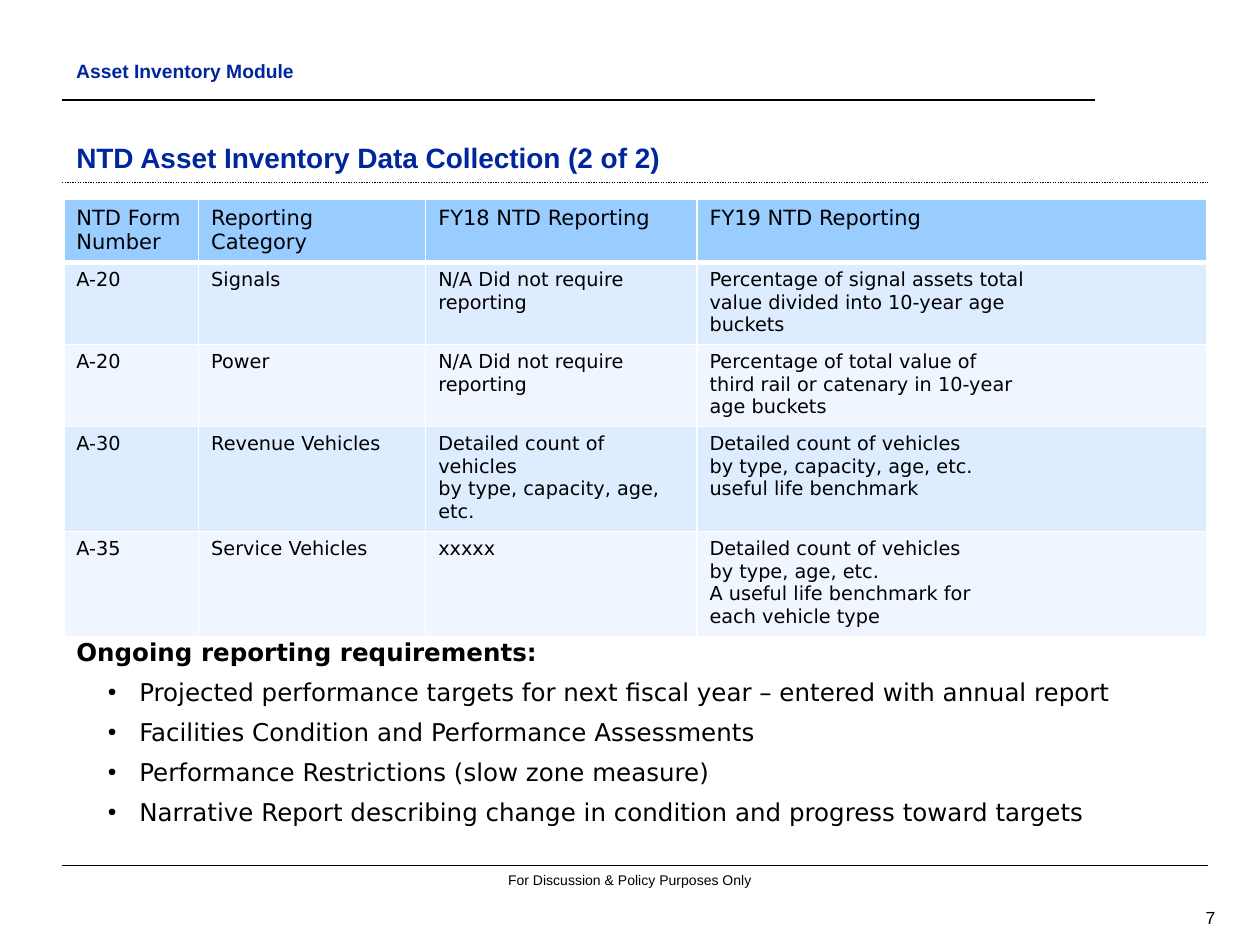
"""Build the asset inventory data collection slide."""
from dataclasses import dataclass

import pptx
import pptx.dml.color
import pptx.enum.dml
import pptx.enum.shapes
import pptx.enum.text
import pptx.oxml.xmlchemy
import pptx.oxml.ns
import pptx.util
from lxml import etree

Pt = pptx.util.Pt
ALIGN = pptx.enum.text.PP_ALIGN
ANCHOR = pptx.enum.text.MSO_ANCHOR
DASH = pptx.enum.dml.MSO_LINE


@dataclass(frozen=True)
class Theme:
    """Hold the colours, fonts and type sizes."""
    ink: str = "000000"
    navy: str = "00269E"
    border: str = "FFFFFF"
    header: str = "99CCFF"
    bands: tuple = ("DEECFF", "EFF6FF")
    sans: str = "Arial"
    body: str = "DejaVu Sans"
    title: int = 16
    requirement: int = 14
    column_head: int = 12
    cell: int = 11
    page: int = 10
    footer: int = 8


THEME = Theme()
LEFT, RULE_LEFT, RIGHT = 36.5, 35.5, 690.5
COLUMN_WIDTHS = (77, 129.75, 155, 291.5)
ROW_HEIGHT = 29.5
HEADINGS = ("NTD Form Number", "Reporting Category", "FY18 NTD Reporting", "FY19 NTD Reporting")
ASSETS = (
    ("A-20", "Signals", "N/A Did not require reporting",
     "Percentage of signal assets total\nvalue divided into 10-year age\nbuckets"),
    ("A-20", "Power", "N/A Did not require reporting",
     "Percentage of total value of\nthird rail or catenary in 10-year\nage buckets"),
    ("A-30", "Revenue Vehicles", "Detailed count of vehicles\nby type, capacity, age, etc.",
     "Detailed count of vehicles\nby type, capacity, age, etc.\nuseful life benchmark"),
    ("A-35", "Service Vehicles", "xxxxx",
     "Detailed count of vehicles\nby type, age, etc.\nA useful life benchmark for\neach vehicle type"),
)
REQUIREMENTS = (
    "Projected performance targets for next fiscal year – entered with annual report",
    "Facilities Condition and Performance Assessments",
    "Performance Restrictions (slow zone measure)",
    "Narrative Report describing change in condition and progress toward targets",
)


def rgb(colour):
    """Turn a hex string into a colour."""
    return pptx.dml.color.RGBColor.from_string(colour)


def add_element(parent, tag, **attributes):
    """Append a DrawingML element with attributes."""
    return etree.SubElement(parent, pptx.oxml.ns.qn(tag), attributes)


def write(paragraph, text, *, size, font=THEME.body, colour=THEME.ink, bold=False,
          align=ALIGN.LEFT, after=0, margin=0, hanging=0, bullet=None):
    """Write formatted text into a paragraph."""
    properties = paragraph._p.get_or_add_pPr()
    properties.set("marL", str(Pt(margin)))
    properties.set("indent", str(Pt(-hanging)))
    paragraph.alignment = align
    paragraph.space_after = Pt(after)
    if bullet:
        add_element(properties, "a:buFont", typeface=THEME.sans)
        add_element(properties, "a:buChar", char=bullet)
    run = paragraph.add_run()
    run.text = text
    run.font.size = Pt(size)
    run.font.name = font
    run.font.bold = bold
    run.font.color.rgb = rgb(colour)


def add_frame(slide, left, top, width, height, anchor=ANCHOR.TOP):
    """Add a wrapping text box and return its text frame."""
    frame = slide.shapes.add_textbox(Pt(left), Pt(top), Pt(width), Pt(height)).text_frame
    frame.word_wrap = True
    frame.vertical_anchor = anchor
    return frame


def add_rule(slide, top, right=RIGHT, weight=0.75, dash=None):
    """Add a horizontal rule from the left margin."""
    rule = slide.shapes.add_connector(
        pptx.enum.shapes.MSO_CONNECTOR.STRAIGHT, Pt(RULE_LEFT), Pt(top), Pt(right), Pt(top))
    rule.line.color.rgb = rgb(THEME.ink)
    rule.line.width = Pt(weight)
    if dash:
        rule.line.dash_style = dash
    add_element(rule._element.spPr, "a:effectLst")


def fill_cell(cell, text, size, fill, bottom=1.0, top=1.0):
    """Write, border and fill one table cell."""
    for index, line in enumerate(text.split("\n")):
        frame = cell.text_frame
        write(frame.add_paragraph() if index else frame.paragraphs[0], line, size=size)
    properties = cell._tc.get_or_add_tcPr()
    for side, weight in (("L", 1), ("R", 1), ("T", top), ("B", bottom)):
        edge = add_element(properties, f"a:ln{side}", w=str(Pt(weight)))
        add_element(add_element(edge, "a:solidFill"), "a:srgbClr", val=THEME.border)
    cell.fill.solid()
    cell.fill.fore_color.rgb = rgb(fill)


def add_inventory(slide):
    """Add the table of reporting by asset category."""
    rows = len(ASSETS) + 1
    inventory = slide.shapes.add_table(
        rows, len(HEADINGS), Pt(LEFT), Pt(114), Pt(sum(COLUMN_WIDTHS)), Pt(ROW_HEIGHT * rows)).table
    inventory.horz_banding = False
    for column, width in zip(inventory.columns, COLUMN_WIDTHS):
        column.width = Pt(width)
    for column, heading in enumerate(HEADINGS):
        fill_cell(inventory.cell(0, column), heading, THEME.column_head, THEME.header, bottom=3)
    for row, asset in enumerate(ASSETS, 1):
        for column, entry in enumerate(asset):
            fill_cell(inventory.cell(row, column), entry, THEME.cell,
                      THEME.bands[(row - 1) % 2], top=3 if row == 1 else 1)


def add_requirements(slide):
    """Add the list of ongoing reporting requirements."""
    frame = add_frame(slide, LEFT, 360.75, 636, 116.5)
    write(frame.paragraphs[0], "Ongoing reporting requirements:", size=THEME.requirement,
          bold=True, after=6, margin=27, hanging=27)
    for requirement in REQUIREMENTS:
        write(frame.add_paragraph(), requirement, size=THEME.requirement,
              after=6, margin=36, hanging=18, bullet="•")


def main():
    """Build and save the slide."""
    deck = pptx.Presentation()
    deck.slide_width, deck.slide_height = Pt(720), Pt(540)
    slide = deck.slides.add_slide(deck.slide_layouts[6])
    add_rule(slide, 57, right=625.5, weight=1)
    add_rule(slide, 104.5, dash=DASH.ROUND_DOT)
    add_rule(slide, 494.5)
    page = add_frame(slide, 641.5, 515.5, 60, 18, ANCHOR.MIDDLE)
    write(page.paragraphs[0], "7", size=THEME.page, font=THEME.sans, align=ALIGN.RIGHT)
    footer = add_frame(slide, 257, 494.5, 206, 17)
    write(footer.paragraphs[0], "For Discussion & Policy Purposes Only",
          size=THEME.footer, font=THEME.sans, align=ALIGN.CENTER)
    title = add_frame(slide, LEFT, 66.25, 610.5, 36.75, ANCHOR.BOTTOM)
    write(title.paragraphs[0], "NTD Asset Inventory Data Collection (2 of 2)",
          size=THEME.title, font=THEME.sans, colour=THEME.navy, bold=True)
    module = add_frame(slide, LEFT, 30.25, 575.25, 18)
    write(module.paragraphs[0], "Asset Inventory Module", size=THEME.cell, font=THEME.sans,
          colour=THEME.navy, bold=True, margin=18, hanging=18)
    add_inventory(slide)
    add_requirements(slide)
    deck.save("out.pptx")


if __name__ == "__main__":
    main()
